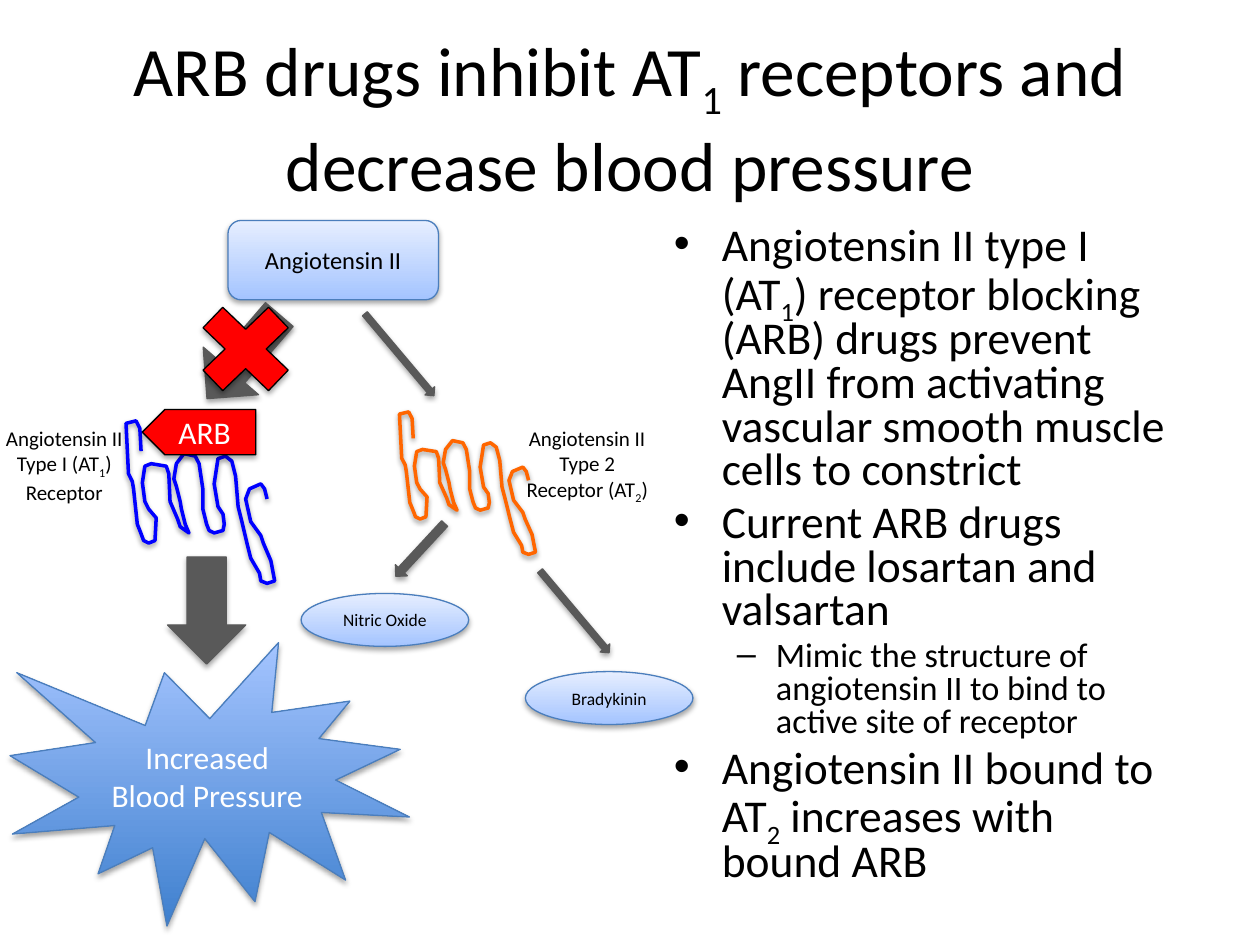
"""Build the slide on how ARB drugs block AT1 receptors."""
from dataclasses import dataclass
from typing import Any, Optional

from lxml import etree
from pptx import Presentation
from pptx.dml.color import RGBColor
from pptx.enum.shapes import MSO_SHAPE
from pptx.enum.text import MSO_ANCHOR, MSO_AUTO_SIZE, PP_ALIGN
from pptx.oxml.ns import qn
from pptx.util import Emu, Pt

PX = 9144
CENTER, LEFT = PP_ALIGN.CENTER, PP_ALIGN.LEFT
MIDDLE, TOP = MSO_ANCHOR.MIDDLE, MSO_ANCHOR.TOP
NO_AUTOFIT = MSO_AUTO_SIZE.NONE
ARROW, ELLIPSE = MSO_SHAPE.DOWN_ARROW, MSO_SHAPE.OVAL
ROUNDED, CROSS = MSO_SHAPE.ROUNDED_RECTANGLE, MSO_SHAPE.MATH_MULTIPLY
TAG, BURST = MSO_SHAPE.PENTAGON, MSO_SHAPE.EXPLOSION1


@dataclass(frozen=True)
class Theme:
    font: str = "Calibri"
    black: str = "000000"
    white: str = "FFFFFF"
    edge: str = "4B7EBC"
    gray: str = "595959"
    red: str = "FF0000"
    at1: str = "0000FF"
    at2: str = "FF6600"
    pale: tuple[str, ...] = ("A4C4FF", "E6EEFF")
    deep: tuple[str, ...] = ("3F80CE", "A4C4FF")
    title: float = 39.6
    body: float = 26
    detail: float = 19.6
    callout: float = 18
    hormone: float = 14
    label: float = 12
    product: float = 10


THEME = Theme()


@dataclass(frozen=True)
class Box:
    left: int
    top: int
    width: int
    height: int

    def emu(self) -> list[Emu]:
        return [Emu(side * PX) for side in (self.left, self.top, self.width, self.height)]


@dataclass(frozen=True)
class Node:
    preset: Any
    box: Box
    fill: tuple[str, ...] = (THEME.gray,)
    line: str = THEME.gray
    text: str = ""
    size: float = THEME.callout
    color: str = THEME.black
    rotation: float = 0
    flipped: bool = False


@dataclass(frozen=True)
class Receptor:
    box: Box
    color: str
    label: str
    label_box: Box


@dataclass(frozen=True)
class Point:
    text: str
    level: int = 0


OUTLINE_WIDTH, OUTLINE_HEIGHT = 118, 130
OUTLINE = [
    (12, 25), (11, 7), (8, 1), (0, 3), (2, 43), (5, 49), (6, 55), (9, 83), (11, 88),
    (14, 96), (18, 98), (23, 96), (24, 78), (18, 71), (15, 65), (13, 50), (15, 37),
    (20, 35), (32, 37), (34, 43), (35, 65), (41, 79), (43, 85), (50, 90), (47, 83),
    (44, 71), (43, 65), (40, 53), (38, 47), (40, 35), (46, 27), (55, 29), (58, 35),
    (61, 55), (61, 71), (64, 83), (66, 88), (70, 90), (77, 88), (78, 83), (77, 75),
    (73, 69), (70, 51), (73, 31), (79, 29), (84, 33), (87, 45), (89, 69), (92, 81),
    (96, 98), (99, 110), (106, 122), (107, 128), (112, 130), (118, 128), (115, 112),
    (109, 98), (107, 92), (99, 81), (95, 63), (98, 55), (107, 51), (110, 55), (112, 63),
]

TITLE = "ARB drugs inhibit AT~1~ receptors and decrease blood pressure"
RECEPTORS = [
    Receptor(Box(100, 333, 118, 130), THEME.at1,
             "Angiotensin II Type I (AT~1~) Receptor", Box(-8, 333, 118, 71)),
    Receptor(Box(317, 326, 108, 114), THEME.at2,
             "Angiotensin II Type 2 Receptor (AT~2~)", Box(407, 333, 118, 71)),
]
NODES = [
    Node(ROUNDED, Box(181, 175, 167, 63), THEME.pale, THEME.edge, "Angiotensin II", THEME.hormone),
    Node(ARROW, Box(164, 239, 58, 88), rotation=40.7),
    Node(CROSS, Box(145, 229, 100, 96), (THEME.red,), THEME.black),
    Node(TAG, Box(113, 325, 90, 36), (THEME.red,), THEME.black, "ARB",
         color=THEME.white, flipped=True),
    Node(BURST, Box(8, 510, 317, 225), THEME.deep, THEME.edge, "Increased Blood Pressure",
         color=THEME.white),
    Node(ARROW, Box(133, 442, 62, 85)),
    Node(ARROW, Box(312, 239, 10, 85), rotation=319.9),
    Node(ELLIPSE, Box(417, 533, 133, 42), THEME.pale, THEME.edge, "Bradykinin", THEME.product),
    Node(ARROW, Box(451, 443, 10, 85), rotation=319.9),
    Node(ELLIPSE, Box(239, 471, 133, 42), THEME.pale, THEME.edge, "Nitric Oxide", THEME.product),
    Node(ARROW, Box(327, 408, 13, 57), rotation=42.8),
]
BODY_BOX = Box(525, 175, 425, 565)
BODY = [
    Point("Angiotensin II type I (AT~1~) receptor blocking (ARB) drugs prevent AngII "
          "from activating vascular smooth muscle cells to constrict"),
    Point("Current ARB drugs include losartan and valsartan"),
    Point("Mimic the structure of angiotensin II to bind to active site of receptor", 1),
    Point("Angiotensin II bound to AT~2~ increases with bound ARB"),
]


def write(paragraph: Any, text: str, *, size: float, color: str = THEME.black,
          align: Any = CENTER) -> None:
    """Fill a paragraph, setting the parts between tildes as subscripts."""
    paragraph.alignment = align
    for index, part in enumerate(text.split("~")):
        run = paragraph.add_run()
        run.text = part
        run.font.name, run.font.size = THEME.font, Pt(size)
        run.font.color.rgb = RGBColor.from_string(color)
        if index % 2:
            run.font._element.set("baseline", "-25000")


def add_shadow(shape: Any, alpha: int) -> None:
    """Give a shape a soft shadow straight below it."""
    shape.shadow.inherit = False
    effects = shape.element.spPr.find(qn("a:effectLst"))
    shadow = etree.SubElement(effects, qn("a:outerShdw"), blurRad=str(Pt(3.1)),
                              dist=str(Pt(1.7)), dir="5400000", rotWithShape="0")
    tint = etree.SubElement(shadow, qn("a:srgbClr"), val=THEME.black)
    etree.SubElement(tint, qn("a:alpha"), val=str(alpha * 1000))


def add_text_box(slide: Any, box: Box) -> Any:
    """Add a wrapping text box and return its text frame."""
    frame = slide.shapes.add_textbox(*box.emu()).text_frame
    frame.word_wrap, frame.vertical_anchor = True, TOP
    return frame


def draw_node(slide: Any, node: Node) -> None:
    """Draw one preset shape of the pathway."""
    shape = slide.shapes.add_shape(node.preset, *node.box.emu())
    shape.rotation = node.rotation
    if node.flipped:
        shape.element.spPr.find(qn("a:xfrm")).set("flipH", "1")
    if len(node.fill) > 1:
        shape.fill.gradient()
        shape.fill.gradient_angle = 90
        for stop, color in zip(shape.fill.gradient_stops, node.fill):
            stop.color.rgb = RGBColor.from_string(color)
    else:
        shape.fill.solid()
        shape.fill.fore_color.rgb = RGBColor.from_string(node.fill[0])
    shape.line.color.rgb = RGBColor.from_string(node.line)
    shape.line.width = Pt(0.75)
    add_shadow(shape, 35)
    if node.text:
        shape.text_frame.word_wrap, shape.text_frame.vertical_anchor = True, MIDDLE
        write(shape.text_frame.paragraphs[0], node.text, size=node.size, color=node.color)


def draw_receptor(slide: Any, receptor: Receptor) -> None:
    """Draw a receptor outline fitted to its box, with its label."""
    left, top, width, height = receptor.box.emu()
    track = [(left + x * width / OUTLINE_WIDTH, top + y * height / OUTLINE_HEIGHT)
             for x, y in OUTLINE]
    builder = slide.shapes.build_freeform(*track[0])
    builder.add_line_segments(track[1:], close=False)
    strand = builder.convert_to_shape()
    strand.fill.background()
    strand.line.color.rgb = RGBColor.from_string(receptor.color)
    strand.line.width = Pt(2)
    add_shadow(strand, 38)
    label = add_text_box(slide, receptor.label_box)
    write(label.paragraphs[0], receptor.label, size=THEME.label)


def draw_body(slide: Any) -> None:
    """Write the bulleted explanation."""
    frame = add_text_box(slide, BODY_BOX)
    previous: Optional[Any] = None
    for point in BODY:
        paragraph = frame.add_paragraph() if previous is not None else frame.paragraphs[0]
        size = THEME.detail if point.level else THEME.body
        margin, hang, bullet = (81, 31, "–") if point.level else (38, 38, "•")
        paragraph.level, paragraph.line_spacing = point.level, 0.8
        paragraph.space_before = Pt(0 if previous is None else round(size * 0.2, 1))
        properties = paragraph._p.get_or_add_pPr()
        properties.set("marL", str(margin * PX))
        properties.set("indent", str(-hang * PX))
        etree.SubElement(properties, qn("a:buFont"), typeface="Arial")
        etree.SubElement(properties, qn("a:buChar"), char=bullet)
        write(paragraph, point.text, size=size, align=LEFT)
        previous = paragraph


def main() -> None:
    """Assemble and save the slide."""
    deck = Presentation()
    deck.slide_width, deck.slide_height = Emu(1000 * PX), Emu(750 * PX)
    slide = deck.slides.add_slide(deck.slide_layouts[5])
    title = slide.shapes.title
    title.left, title.top, title.width, title.height = Box(50, 30, 900, 125).emu()
    title.text_frame.auto_size, title.text_frame.vertical_anchor = NO_AUTOFIT, MIDDLE
    write(title.text_frame.paragraphs[0], TITLE, size=THEME.title)
    for receptor in RECEPTORS:
        draw_receptor(slide, receptor)
    for node in NODES:
        draw_node(slide, node)
    draw_body(slide)
    deck.save("out.pptx")


if __name__ == "__main__":
    main()
